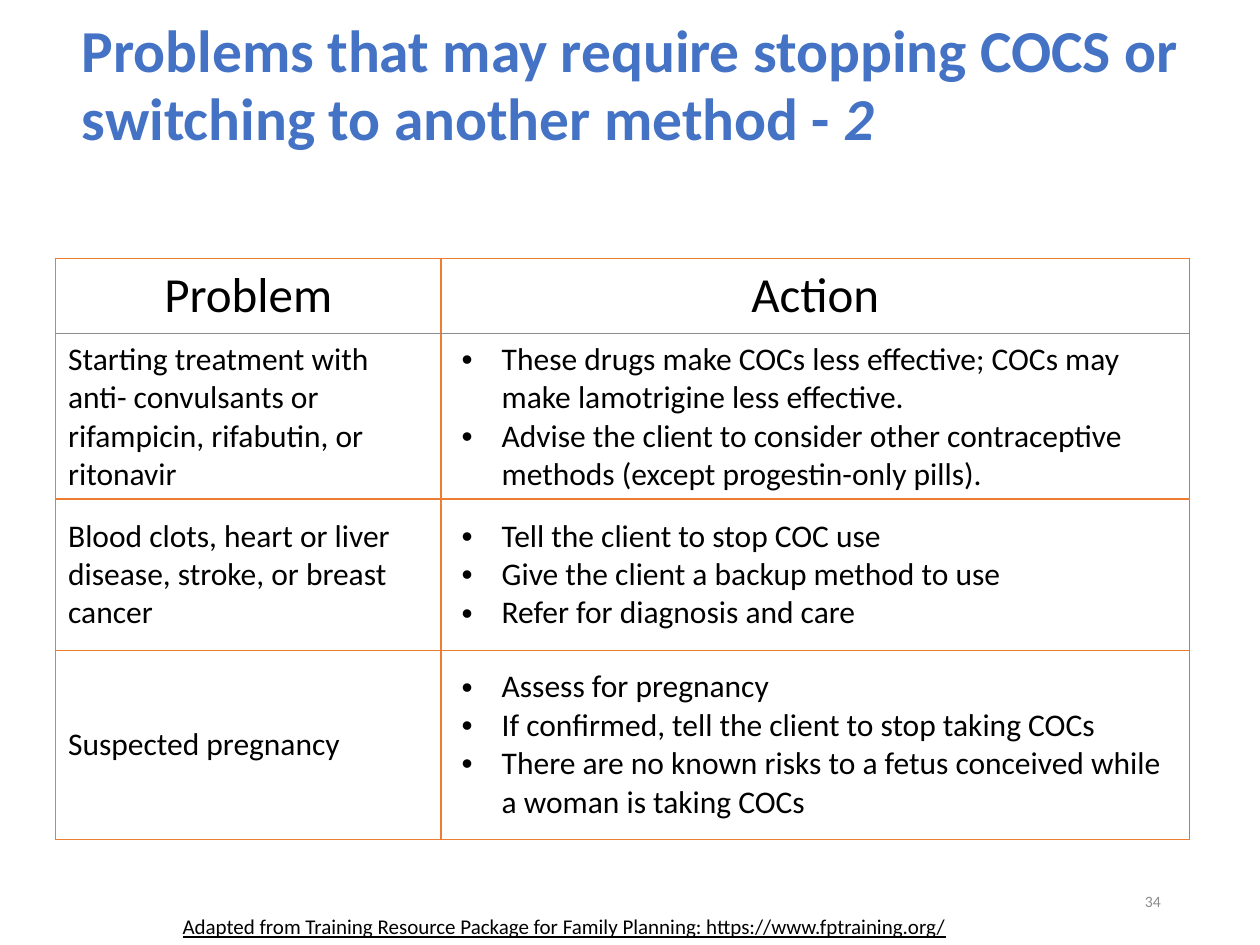
"""Build a slide with a table of problems and actions for COC users."""
from lxml.etree import SubElement
from pptx import Presentation
from pptx.dml.color import RGBColor
from pptx.enum.text import MSO_ANCHOR, PP_ALIGN
from pptx.oxml.ns import qn
from pptx.util import Cm, Pt

FONT = "Calibri"
BLACK, BLUE, ORANGE, GREY = "000000", "4472C4", "ED7D31", "8C8C8C"

TITLE = ("Problems that may require stopping COCS or switching to another method - ", "2")
HEADERS = ("Problem", "Action")
ROWS = [
    ("Starting treatment with anti- convulsants or rifampicin, rifabutin, or ritonavir",
     ["These drugs make COCs less effective; COCs may make lamotrigine less effective.",
      "Advise the client to consider other contraceptive methods "
      "(except progestin-only pills)."]),
    ("Blood clots, heart or liver disease, stroke, or breast cancer",
     ["Tell the client to stop COC use",
      "Give the client a backup method to use",
      "Refer for diagnosis and care"]),
    ("Suspected pregnancy",
     ["Assess for pregnancy",
      "If confirmed, tell the client to stop taking COCs",
      "There are no known risks to a fetus conceived while a woman is taking COCs"]),
]
SOURCE = "Adapted from Training Resource Package for Family Planning: https://www.fptraining.org/"
PAGE = "34"
COL_WIDTHS = (7.77, 15.09)
ROW_HEIGHTS = (1.52, 3.33, 3.05, 3.81)


def color(value):
    return RGBColor.from_string(value)


def style(font, size, value, bold=False):
    font.name, font.size, font.bold = FONT, Pt(size), bold
    font.color.rgb = color(value)


def add_text(s, box, runs, size, value, anchor=MSO_ANCHOR.TOP, bold=False):
    tf = s.shapes.add_textbox(*map(Cm, box)).text_frame
    tf.word_wrap = True
    tf.vertical_anchor = anchor
    p = tf.paragraphs[0]
    for text in runs:
        r = p.add_run()
        r.text = text
        style(r.font, size, value, bold)
    return p


def add_bullet(p):
    pPr = p._p.get_or_add_pPr()
    pPr.set("marL", str(Cm(0.97)))
    pPr.set("indent", str(-Cm(0.81)))
    SubElement(pPr, qn("a:buFont"), typeface="Arial")
    SubElement(pPr, qn("a:buChar"), char="•")


def set_borders(cell, edges):
    tcPr = cell._tc.get_or_add_tcPr()
    for edge, (value, width) in edges.items():
        ln = SubElement(tcPr, qn(f"a:ln{edge}"), w=str(Pt(width)))
        fill = SubElement(ln, qn("a:solidFill"))
        SubElement(fill, qn("a:srgbClr"), val=value)


def fill_cell(cell, lines, size, anchor, align, bulleted):
    cell.vertical_anchor = anchor
    tf = cell.text_frame
    tf.text = "\n".join(lines)
    for p in tf.paragraphs:
        if bulleted:
            add_bullet(p)
        p.alignment = align
        for r in p.runs:
            style(r.font, size, BLACK)


def add_problem_table(s):
    rows = [[[text] for text in HEADERS]] + [[[problem], actions] for problem, actions in ROWS]
    box = (1.12, 5.21, sum(COL_WIDTHS), sum(ROW_HEIGHTS))
    table = s.shapes.add_table(len(rows), len(HEADERS), *map(Cm, box)).table
    table.first_row = table.horz_banding = False
    for column, width in zip(table.columns, COL_WIDTHS):
        column.width = Cm(width)
    thick, thin = (ORANGE, 1), (GREY, 0.5)
    for i, (row, height) in enumerate(zip(rows, ROW_HEIGHTS)):
        table.rows[i].height = Cm(height)
        for j, lines in enumerate(row):
            cell = table.cell(i, j)
            header = i == 0
            fill_cell(cell, lines, 28 if header else 18,
                      MSO_ANCHOR.TOP if i == 1 else MSO_ANCHOR.MIDDLE,
                      PP_ALIGN.CENTER if header else PP_ALIGN.LEFT,
                      j == 1 and not header)
            set_borders(cell, {"L": thick, "R": thin if j == 1 else thick,
                               "T": thin if i == 1 else thick,
                               "B": thin if header else thick})
            cell.fill.background()


def main():
    prs = Presentation()
    prs.slide_width, prs.slide_height = Cm(25.4), Cm(19.05)
    s = prs.slides.add_slide(prs.slide_layouts[6])
    p = add_text(s, (1.4, 0.15, 22.86, 3.18), TITLE, 34, BLUE, MSO_ANCHOR.MIDDLE, True)
    p.line_spacing = 0.95
    p.runs[1].font.italic = True
    add_problem_table(s)
    p = add_text(s, (17.93, 17.65, 5.72, 1.02), [PAGE], 9, GREY, MSO_ANCHOR.MIDDLE)
    p.alignment = PP_ALIGN.RIGHT
    p = add_text(s, (3.43, 18.29, 17.63, 0.69), [SOURCE], 12, BLACK)
    p.runs[0].font.underline = True
    prs.save("out.pptx")


if __name__ == "__main__":
    main()
